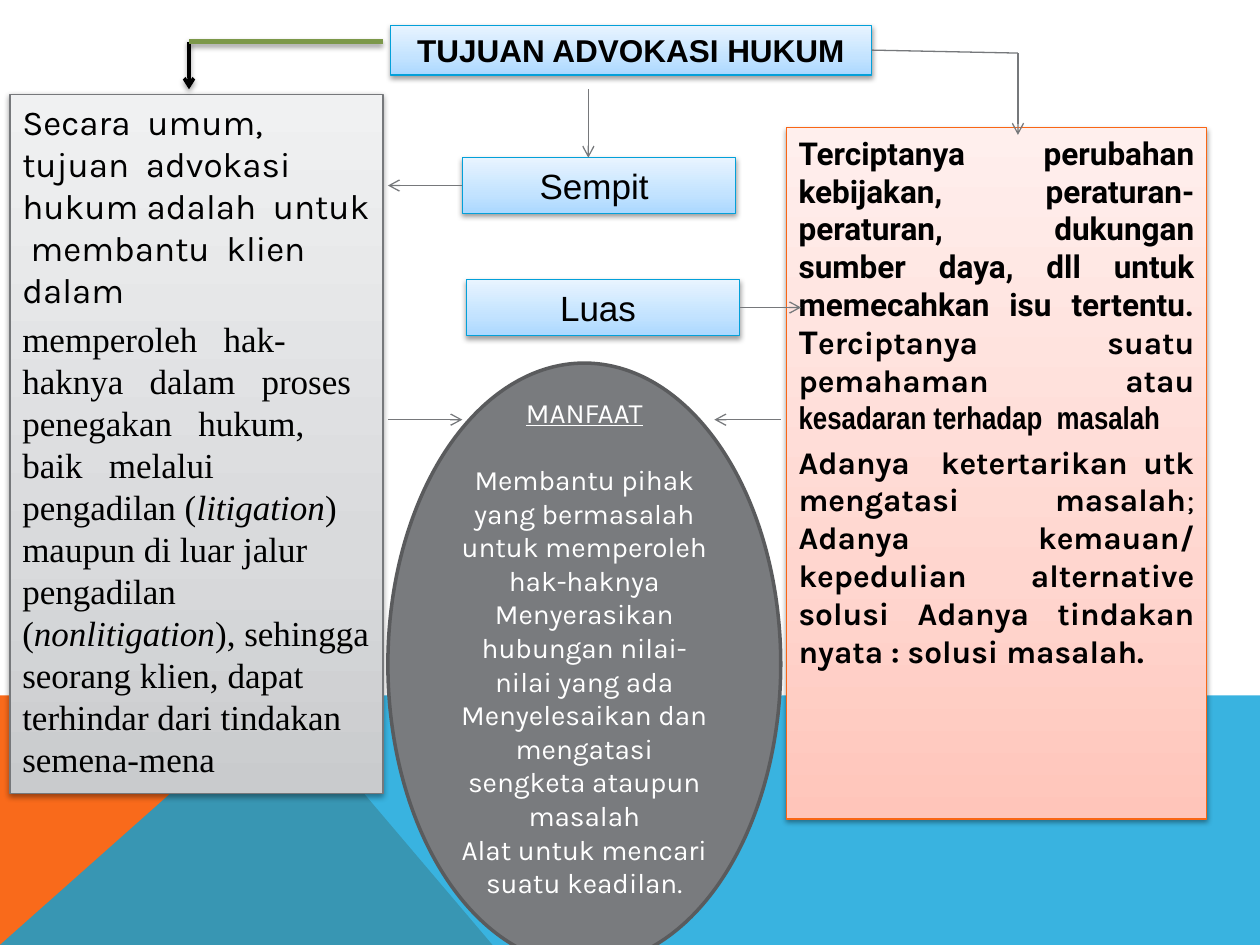
from copy import deepcopy
from dataclasses import dataclass

from pptx import Presentation
from pptx.dml.color import RGBColor
from pptx.enum.shapes import MSO_CONNECTOR, MSO_SHAPE
from pptx.enum.text import MSO_ANCHOR, PP_ALIGN
from pptx.oxml import parse_xml
from pptx.oxml.ns import nsdecls, qn
from pptx.oxml.xmlchemy import OxmlElement
from pptx.util import Cm, Pt


@dataclass(frozen=True)
class Theme:
    # Gradients run from the bottom up; the last colour is the outline
    blue: tuple = ("ABD8FF", "C3E3FF", "E8F4FF", "03A0D9")
    grey: tuple = ("C9CBCD", "D9DADC", "F0F1F2", "76787B")
    rose: tuple = ("FFC5BA", "FFD6CF", "FFEFED", "F96615")
    orange: str = "F96A1B"
    sky: str = "08A1D9"
    oval: str = "797B7E"
    rim: str = "5A5B5D"
    line: str = "76787B"
    green: str = "7C984A"
    black: str = "000000"
    white: str = "FFFFFF"
    head: int = 18
    body: int = 20
    small: int = 16


@dataclass(frozen=True)
class Box:
    x: float
    y: float
    w: float
    h: float

    @property
    def right(self):
        return self.x + self.w

    @property
    def mid(self):
        return self.y + self.h / 2

    def place(self):
        return Cm(self.x), Cm(self.y), Cm(self.w), Cm(self.h)


T = Theme()
WIDE, HIGH = 25.4, 19.05
HEAD = Box(7.87, 0.51, 9.7, 1.0)
LEFT = Box(0.2, 1.9, 7.52, 14.1)
RIGHT = Box(15.85, 2.57, 8.48, 13.94)
NARROW = Box(9.32, 3.18, 5.51, 1.12)
BROAD = Box(9.4, 5.64, 5.51, 1.12)
OVAL = Box(7.82, 7.32, 7.92, 12.14)
FLOOR = Box(0, 14.02, WIDE, HIGH - 14.02)


def rgb(code):
    return RGBColor.from_string(code)


def shade(part):
    """Soft shadow straight below the part."""
    props = part._element.spPr
    for old in props.findall(qn("a:effectLst")):
        props.remove(old)
    props.append(parse_xml(
        f'<a:effectLst {nsdecls("a")}><a:outerShdw blurRad="{Pt(3.1)}" '
        f'dist="{Pt(1.6)}" dir="5400000" rotWithShape="0"><a:srgbClr val="{T.black}">'
        '<a:alpha val="38000"/></a:srgbClr></a:outerShdw></a:effectLst>'))


def paint(part, tones):
    """Three-stop gradient, thin outline and shadow."""
    fill = part.fill
    fill.gradient()
    fill.gradient_angle = 90
    stops = part._element.spPr.find(qn("a:gradFill")).find(qn("a:gsLst"))
    stops.insert(1, deepcopy(stops[0]))
    for stop, tone, spot in zip(fill.gradient_stops, tones, (0, 0.35, 1)):
        stop.color.rgb = rgb(tone)
        stop.position = spot
    part.line.color.rgb = rgb(tones[-1])
    part.line.width = Pt(0.75)
    shade(part)


def write(frame, paras, size, tint, align, gap=0, anchor=MSO_ANCHOR.TOP):
    """Each paragraph is a list of (text, font, style) runs."""
    frame.word_wrap = True
    frame.vertical_anchor = anchor
    frame.margin_left = frame.margin_right = Cm(0.25)
    frame.margin_top = frame.margin_bottom = Cm(0.13)
    for i, runs in enumerate(paras):
        para = frame.paragraphs[0] if i == 0 else frame.add_paragraph()
        para.alignment = align
        para.line_spacing = 1.0
        para.space_before = Pt(gap if i else 0)
        para.font.size = Pt(size)
        para.font.color.rgb = rgb(tint)
        same = len({run[1:] for run in runs}) == 1
        for text, face, style in runs:
            run = para.add_run()
            run.text = text
            font = para.font if same else run.font
            font.name = face
            font.bold = "b" in style
            font.italic = "i" in style
            font.underline = "u" in style


def wedge(slide, points, tint, alpha=None):
    pen = slide.shapes.build_freeform(Cm(points[0][0]), Cm(points[0][1]))
    pen.add_line_segments([(Cm(x), Cm(y)) for x, y in points[1:]])
    part = pen.convert_to_shape()
    part.shadow.inherit = False
    part.fill.solid()
    part.fill.fore_color.rgb = rgb(tint)
    part.line.fill.background()
    if alpha:
        clear = OxmlElement("a:alpha")
        clear.set("val", str(alpha * 1000))
        part._element.spPr.find(qn("a:solidFill"))[0].append(clear)


def backdrop(slide, box):
    peak, base = (box.x + 5.66, box.y), box.y + box.h
    wedge(slide, [(box.x, base), (box.x, box.y), peak, (9.93, base)], T.orange)
    wedge(slide, [(box.x, base), peak, (box.right, box.y), (box.right, base)],
          T.sky, 80)


def heading(slide, box):
    part = slide.shapes.title
    part.left, part.top, part.width, part.height = box.place()
    paint(part, T.blue)
    write(part.text_frame, [[("TUJUAN ADVOKASI HUKUM", "Arial", "b")]],
          T.head, T.black, PP_ALIGN.CENTER, anchor=MSO_ANCHOR.MIDDLE)


def panel(slide, box, tones, paras, size, align):
    part = slide.shapes.add_shape(MSO_SHAPE.RECTANGLE, *box.place())
    paint(part, tones)
    write(part.text_frame, paras, size, T.black, align, gap=size / 5)


def oval(slide, box):
    part = slide.shapes.add_shape(MSO_SHAPE.OVAL, *box.place())
    part.shadow.inherit = False
    part.fill.solid()
    part.fill.fore_color.rgb = rgb(T.oval)
    part.line.color.rgb = rgb(T.rim)
    part.line.width = Pt(2)
    gains = ("Membantu pihak yang bermasalah untuk memperoleh hak-haknya",
             "Menyerasikan hubungan nilai-nilai yang ada",
             "Menyelesaikan dan mengatasi sengketa ataupun masalah",
             "Alat untuk mencari suatu keadilan.")
    frame = part.text_frame
    write(frame, [[("MANFAAT", "Karla", "u")]] + [[(g, "Karla", "")] for g in gains],
          T.small, T.white, PP_ALIGN.CENTER, anchor=MSO_ANCHOR.MIDDLE)
    frame.paragraphs[1].space_before = Pt(19)
    frame.margin_bottom = Cm(0.8)


def link(slide, start, end, tint=T.line, width=0.75, arrow=True, dark=False):
    part = slide.shapes.add_connector(
        MSO_CONNECTOR.STRAIGHT, *(Cm(v) for v in (*start, *end)))
    part.line.color.rgb = rgb(tint)
    part.line.width = Pt(width)
    if arrow:
        tail = OxmlElement("a:tailEnd")
        tail.set("type", "arrow")
        part.line._get_or_add_ln().append(tail)
    if dark:
        shade(part)
    else:
        part._element.spPr.append(OxmlElement("a:effectLst"))


def links(slide):
    # Heading to both panels
    bend, top = 3.81, 0.84
    link(slide, (bend, top), (bend, LEFT.y - 0.1), T.black, 2, dark=True)
    link(slide, (LEFT.right, top), (bend, top), T.green, 3, arrow=False, dark=True)
    turn = (20.52, 1.07)
    link(slide, (HEAD.right, HEAD.mid), turn, arrow=False)
    link(slide, turn, (turn[0], RIGHT.y + 0.15))
    # Heading to the two scopes, and scopes to panels
    link(slide, (11.86, 1.8), (11.86, NARROW.y))
    link(slide, (NARROW.x, NARROW.mid), (OVAL.x, NARROW.mid))
    link(slide, (BROAD.right, BROAD.mid), (RIGHT.x + 0.3, BROAD.mid))
    # Panels to the oval
    level = 8.46
    link(slide, (OVAL.x, level), (9.32, level))
    link(slide, (OVAL.right, level), (14.4, level))


def main():
    deck = Presentation()
    deck.slide_width, deck.slide_height = Cm(WIDE), Cm(HIGH)
    slide = deck.slides.add_slide(deck.slide_layouts[5])
    serif = "Times New Roman"
    general = [
        [("Secara  umum,  tujuan  advokasi hukum adalah  untuk  membantu  klien  dalam",
          "Karla", "")],
        [("memperoleh   hak-haknya   dalam   proses   penegakan   hukum,   baik   "
          "melalui pengadilan (", serif, ""), ("litigation", serif, "i"),
         (") maupun di luar jalur pengadilan (", serif, ""),
         ("nonlitigation", serif, "i"),
         ("), sehingga seorang klien, dapat terhindar dari tindakan semena-mena",
          serif, "")]]
    change = [
        [("Terciptanya perubahan kebijakan, peraturan-peraturan, dukungan sumber "
          "daya, dll untuk memecahkan isu tertentu. T", "Roboto", "b"),
         ("erciptanya suatu pemahaman atau ", "Karla", "b"),
         ("kesadaran terhadap  masalah", "Arial Narrow", "b")],
        [("Adanya  ketertarikan utk mengatasi masalah", "Karla", "b"),
         ("; ", "Karla", ""),
         ("Adanya kemauan/ kepedulian   alternative solusi Adanya tindakan nyata : "
          "solusi masalah.", "Karla", "b")]]

    backdrop(slide, FLOOR)
    heading(slide, HEAD)
    panel(slide, LEFT, T.grey, general, T.body, PP_ALIGN.LEFT)
    panel(slide, RIGHT, T.rose, change, T.head, PP_ALIGN.JUSTIFY)
    for box, word in ((NARROW, "Sempit "), (BROAD, "Luas ")):
        panel(slide, box, T.blue, [[(word, "Arial", "")]], T.body, PP_ALIGN.CENTER)
    oval(slide, OVAL)
    links(slide)
    deck.save("out.pptx")


if __name__ == "__main__":
    main()
